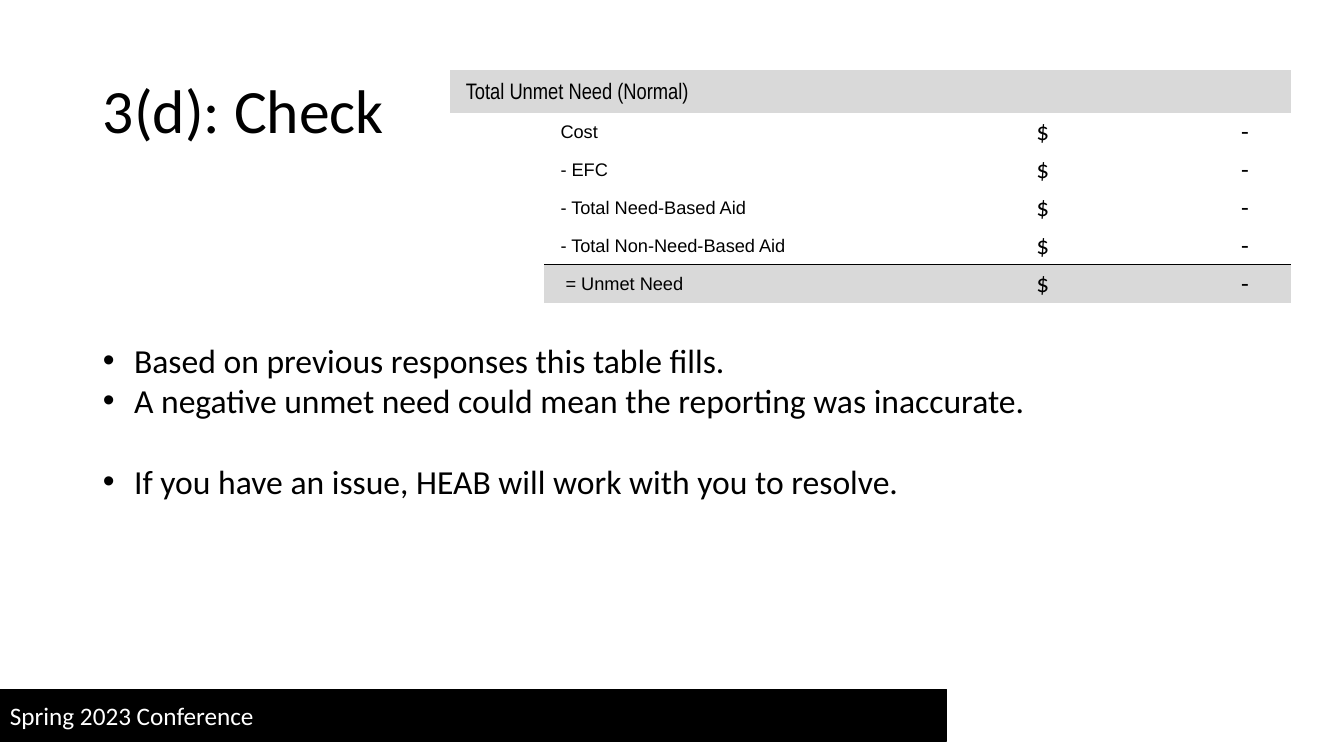
from dataclasses import dataclass

from pptx import Presentation
from pptx import util as u
from pptx.dml.color import RGBColor
from pptx.enum import shapes, text
from pptx.oxml import parse_xml
from pptx.oxml.ns import nsdecls

inch = u.Inches


@dataclass(frozen=True)
class Theme:
    ink: str = "000000"
    paper: str = "FFFFFF"
    band: str = "D9D9D9"
    font: str = "Calibri"
    label: str = "Arial"
    narrow: str = "Arial Narrow"
    title: int = 44
    body: int = 24
    head: int = 16
    item: int = 13
    base: int = 18


THEME = Theme()
NO_GRID = "{2D5ABB26-0587-4C30-8999-92F81FD0307C}"
COLS = [0.94, 1.91, 1.17, 1.74, 2.59]
ROW = 0.34
ITEMS = ["Cost", "- EFC", "- Total Need-Based Aid",
         "- Total Non-Need-Based Aid", "= Unmet Need"]
# Each point with its space before
POINTS = [
    ("Based on previous responses this table fills.", 0),
    ("A negative unmet need could mean the reporting was inaccurate.", 0),
    ("If you have an issue, HEAB will work with you to resolve.", 29),
]


def style(para, size, font=THEME.font, color=THEME.ink):
    para.font.size = u.Pt(size)
    para.font.name = font
    para.font.color.rgb = RGBColor.from_string(color)


def place(shape, left, top, width, height):
    shape.left, shape.top = inch(left), inch(top)
    shape.width, shape.height = inch(width), inch(height)


def add_foot(slide, words):
    bar = slide.shapes.add_shape(shapes.MSO_SHAPE.RECTANGLE, inch(0),
                                 inch(6.84), inch(9.39), inch(0.51))
    bar.shadow.inherit = False
    bar.fill.solid()
    bar.fill.fore_color.rgb = RGBColor.from_string(THEME.ink)
    bar.line.color.rgb = RGBColor.from_string(THEME.ink)
    bar.line.width = u.Pt(1)
    frame = bar.text_frame
    frame.vertical_anchor = text.MSO_ANCHOR.MIDDLE
    para = frame.paragraphs[0]
    para.text = words
    para.alignment = text.PP_ALIGN.LEFT
    style(para, THEME.base, color=THEME.paper)


def set_title(slide, words):
    title = slide.shapes.title
    place(title, 0.92, 0.4, 11.5, 1.45)
    frame = title.text_frame
    frame.text = words
    frame.auto_size = text.MSO_AUTO_SIZE.NONE
    frame.vertical_anchor = text.MSO_ANCHOR.MIDDLE
    para = frame.paragraphs[0]
    para.alignment = text.PP_ALIGN.LEFT
    para.line_spacing = 0.9
    style(para, THEME.title)


def set_list(slide, points):
    body = slide.placeholders[1]
    place(body, 0.92, 3.32, 11.7, 1.72)
    frame = body.text_frame
    frame.text = "\n".join(words for words, gap in points)
    frame.auto_size = text.MSO_AUTO_SIZE.SHAPE_TO_FIT_TEXT
    for para, (words, gap) in zip(frame.paragraphs, points):
        para.line_spacing = 1.0
        para.space_before = u.Pt(gap)
        props = para._p.get_or_add_pPr()
        props.set("marL", str(inch(0.31)))
        props.set("indent", str(-inch(0.31)))
        props.append(parse_xml(f'<a:buFont {nsdecls("a")} typeface="Arial"/>'))
        props.append(parse_xml(f'<a:buChar {nsdecls("a")} char="•"/>'))
        style(para, THEME.body)


def set_cell(cell, words, size, font, left=0.16, pad=0.08):
    cell.margin_left, cell.margin_right = inch(left), inch(pad * 2)
    cell.margin_top = cell.margin_bottom = inch(pad)
    cell.vertical_anchor = text.MSO_ANCHOR.BOTTOM
    para = cell.text_frame.paragraphs[0]
    para.text = words
    style(para, size, font)


def set_sum(cell):
    # Dollar sign at the left, dash on a tab stop
    para = cell.text_frame.paragraphs[0]
    props = para._p.get_or_add_pPr()
    props.append(parse_xml(f'<a:tabLst {nsdecls("a")}><a:tab '
                           f'pos="{inch(2.03)}" algn="l"/></a:tabLst>'))
    set_cell(cell, "$\t-", THEME.base, THEME.font, left=0.06, pad=0)
    cell.vertical_anchor = text.MSO_ANCHOR.MIDDLE


def shade(cell, filled):
    if filled:
        cell.fill.solid()
        cell.fill.fore_color.rgb = RGBColor.from_string(THEME.band)
    else:
        cell.fill.background()


def rule(cell, side):
    props = cell._tc.get_or_add_tcPr()
    props.insert(0, parse_xml(
        f'<a:{side} {nsdecls("a")} w="{u.Pt(0.5)}"><a:solidFill>'
        f'<a:srgbClr val="{THEME.ink}"/></a:solidFill></a:{side}>'))


def add_needs(slide):
    count = len(ITEMS) + 1
    frame = slide.shapes.add_table(count, len(COLS), inch(4.46), inch(0.69),
                                   inch(sum(COLS)), inch(ROW * count))
    table = frame.table
    table.first_row = table.horz_banding = False
    table._tbl.tblPr.find("{*}tableStyleId").text = NO_GRID
    for col, width in zip(table.columns, COLS):
        col.width = inch(width)
    for row in table.rows:
        row.height = inch(ROW)

    # Small empty cells, fills and the line above the result
    last = count - 1
    for r in range(count):
        for c in range(len(COLS)):
            cell = table.cell(r, c)
            set_cell(cell, "", THEME.item, THEME.label, left=0, pad=0)
            shade(cell, r == 0 or (r == last and c > 0))
            if c > 0 and r >= last - 1:
                rule(cell, "lnT" if r == last else "lnB")

    # Heading and item rows
    table.cell(0, 0).merge(table.cell(0, 1))
    set_cell(table.cell(0, 0), "Total Unmet Need (Normal)",
             THEME.head, THEME.narrow)
    for r, item in enumerate(ITEMS, 1):
        table.cell(r, 1).merge(table.cell(r, 2))
        set_cell(table.cell(r, 1), item, THEME.item, THEME.label,
                 left=0.21 if r == last else 0.16)
        set_sum(table.cell(r, 4))


def main():
    deck = Presentation()
    deck.slide_width, deck.slide_height = inch(13.33), inch(7.5)
    slide = deck.slides.add_slide(deck.slide_layouts[1])
    add_foot(slide, "Spring 2023 Conference")
    set_title(slide, "3(d): Check")
    add_needs(slide)
    set_list(slide, POINTS)
    deck.save("out.pptx")


if __name__ == "__main__":
    main()
